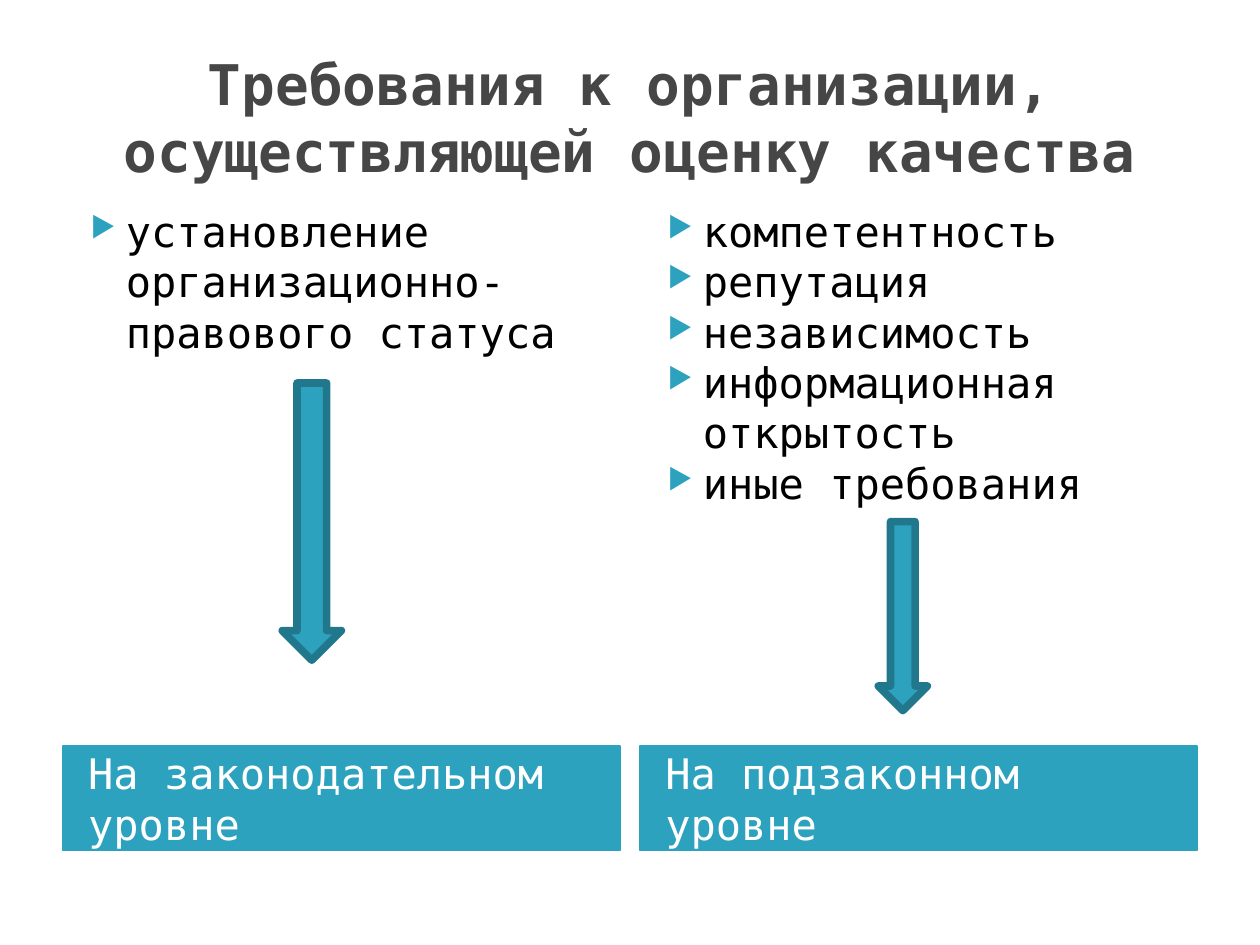
from lxml.etree import SubElement
from pptx import Presentation
from pptx.dml.color import RGBColor
from pptx.enum.shapes import MSO_SHAPE
from pptx.enum.text import MSO_ANCHOR, PP_ALIGN
from pptx.oxml.ns import qn
from pptx.util import Inches, Pt

FONT = "DejaVu Sans Mono"
TEAL = RGBColor(0x2D, 0xA2, 0xBF)
DARK_TEAL = RGBColor(0x21, 0x78, 0x8D)
GREY = RGBColor(0x46, 0x46, 0x46)
BLACK = RGBColor(0, 0, 0)
WHITE = RGBColor(0xFF, 0xFF, 0xFF)

# Grid in inches: two equal columns between the margins
WIDTH, HEIGHT = 10, 7.5
MARGIN, GAP = 0.5, 0.16
COLUMN = (WIDTH - 2 * MARGIN - GAP) / 2
LIST_TOP, LIST_HEIGHT = 1.58, 4.31
BAND_TOP, BAND_HEIGHT = 5.92, 0.83

# Items, arrow box (offset in column, top, width, height), level
COLUMNS = [
    (["установление организационно-правового статуса"],
     (1.74, 3.04, 0.47, 2.2), "На законодательном уровне"),
    (["компетентность", "репутация", "независимость",
      "информационная открытость", "иные требования"],
     (1.89, 4.14, 0.39, 1.5), "На подзаконном уровне"),
]


def add_text(p, text, size, color, bold=False):
    r = p.add_run()
    r.text = text
    r.font.name, r.font.size, r.font.bold = FONT, Pt(size), bold
    r.font.color.rgb = color


def add_bullet(p):
    pPr = p._p.get_or_add_pPr()
    pPr.set("marL", str(Inches(0.4)))
    pPr.set("indent", str(Inches(-0.28)))
    color = SubElement(pPr, qn("a:buClr"))
    SubElement(color, qn("a:srgbClr"), val=str(TEAL))
    SubElement(pPr, qn("a:buSzPct"), val="68000")
    SubElement(pPr, qn("a:buChar"), char="▶")


def add_box(s, kind, box, line, line_width):
    sp = s.shapes.add_shape(kind, *map(Inches, box))
    sp.shadow.inherit = False
    sp.fill.solid()
    sp.fill.fore_color.rgb = TEAL
    sp.line.color.rgb = line
    sp.line.width = Pt(line_width)
    return sp


def add_frame(s, box):
    tf = s.shapes.add_textbox(*map(Inches, box)).text_frame
    tf.word_wrap = True
    return tf


def add_title(s, box, text):
    tf = add_frame(s, box)
    tf.vertical_anchor = MSO_ANCHOR.MIDDLE
    p = tf.paragraphs[0]
    p.alignment = PP_ALIGN.CENTER
    add_text(p, text, 32, GREY, bold=True)


def add_column(s, left, items, arrow, level):
    # Bulleted requirements
    tf = add_frame(s, (left, LIST_TOP, COLUMN, LIST_HEIGHT))
    for i, item in enumerate(items):
        p = tf.add_paragraph() if i else tf.paragraphs[0]
        add_bullet(p)
        add_text(p, item, 24, BLACK)

    # Arrow down to the level
    offset, top, width, height = arrow
    add_box(s, MSO_SHAPE.DOWN_ARROW, (left + offset, top, width, height),
            DARK_TEAL, 4.33)

    # Level band
    band = add_box(s, MSO_SHAPE.RECTANGLE,
                   (left, BAND_TOP, COLUMN, BAND_HEIGHT), TEAL, 0.75)
    tf = band.text_frame
    tf.word_wrap = True
    tf.margin_left = Inches(0.2)
    tf.vertical_anchor = MSO_ANCHOR.MIDDLE
    p = tf.paragraphs[0]
    p.alignment = PP_ALIGN.LEFT
    add_text(p, level, 24, WHITE)


def main():
    prs = Presentation()
    prs.slide_width, prs.slide_height = Inches(WIDTH), Inches(HEIGHT)
    s = prs.slides.add_slide(prs.slide_layouts[6])
    add_title(s, (MARGIN, 0.3, WIDTH - 2 * MARGIN, 1.25),
              "Требования к организации, осуществляющей оценку качества")
    for i, column in enumerate(COLUMNS):
        add_column(s, MARGIN + i * (COLUMN + GAP), *column)
    prs.save("out.pptx")


if __name__ == "__main__":
    main()
